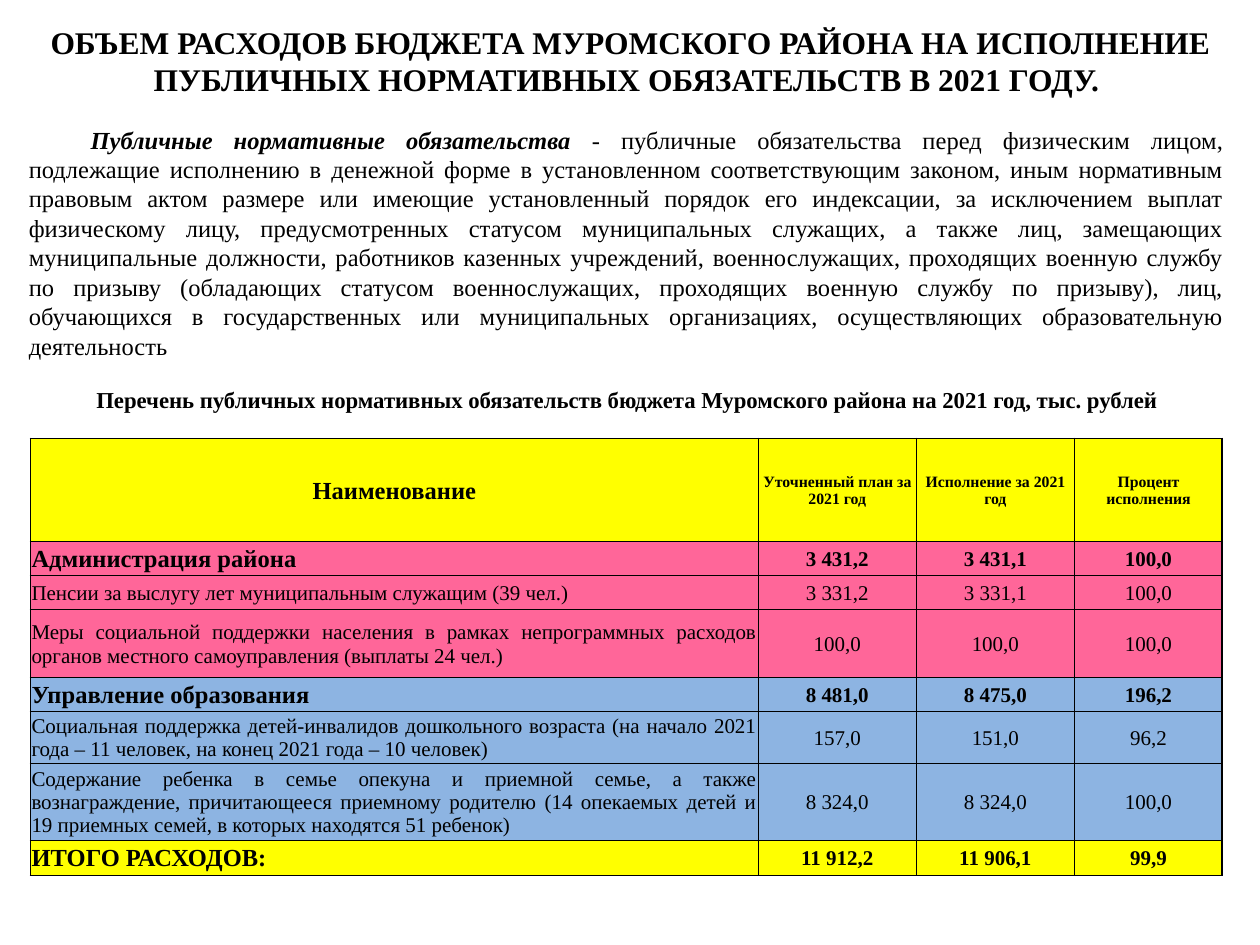
from lxml import etree
from pptx import Presentation
from pptx.dml.color import RGBColor
from pptx.enum.text import MSO_ANCHOR, PP_ALIGN
from pptx.oxml.ns import qn
from pptx.util import Inches, Pt

CENTER, JUSTIFY = PP_ALIGN.CENTER, PP_ALIGN.JUSTIFY
TOP, MIDDLE = MSO_ANCHOR.TOP, MSO_ANCHOR.MIDDLE
FONT = "Times New Roman"
BLACK, YELLOW, PINK, BLUE = "000000", "FFFF00", "FF6699", "8DB4E2"

TITLE = ("ОБЪЕМ РАСХОДОВ БЮДЖЕТА МУРОМСКОГО РАЙОНА НА ИСПОЛНЕНИЕ "
         "ПУБЛИЧНЫХ НОРМАТИВНЫХ ОБЯЗАТЕЛЬСТВ В 2021 ГОДУ. ")
TERM = "Публичные нормативные обязательства"
DEFINITION = (
    " - публичные обязательства перед физическим лицом, подлежащие исполнению "
    "в денежной форме в установленном соответствующим законом, иным нормативным "
    "правовым актом размере или имеющие установленный порядок его индексации, "
    "за исключением выплат физическому лицу, предусмотренных статусом "
    "муниципальных служащих, а также лиц, замещающих муниципальные должности, "
    "работников казенных учреждений, военнослужащих, проходящих военную службу "
    "по призыву (обладающих статусом военнослужащих, проходящих военную службу "
    "по призыву), лиц, обучающихся в государственных или муниципальных "
    "организациях, осуществляющих образовательную деятельность")
CAPTION = ("Перечень публичных нормативных обязательств бюджета "
           "Муромского района на 2021 год, тыс. рублей")
HEADERS = ["Наименование", "Уточненный план за 2021 год",
           "Исполнение за 2021 год", "Процент исполнения"]
ROWS = [
    (0.27, PINK, True, ["Администрация района", "3 431,2", "3 431,1", "100,0"]),
    (0.27, PINK, False, ["Пенсии за выслугу лет муниципальным служащим (39 чел.)",
                         "3 331,2", "3 331,1", "100,0"]),
    (0.54, PINK, False, ["Меры социальной поддержки населения в рамках непрограммных "
                         "расходов органов местного самоуправления (выплаты 24 чел.)",
                         "100,0", "100,0", "100,0"]),
    (0.27, BLUE, True, ["Управление образования ", "8 481,0", "8 475,0", "196,2"]),
    (0.27, BLUE, False, ["Социальная поддержка детей-инвалидов дошкольного возраста "
                         "(на начало 2021 года – 11 человек, на конец 2021 года – "
                         "10 человек)", "157,0", "151,0", "96,2"]),
    (0.55, BLUE, False, ["Содержание ребенка в семье опекуна и приемной семье, а также "
                         "вознаграждение, причитающееся приемному родителю (14 опекаемых "
                         "детей и 19 приемных семей, в которых находятся 51 ребенок)",
                         "8 324,0", "8 324,0", "100,0"]),
    (0.28, YELLOW, True, ["ИТОГО РАСХОДОВ:", "11 912,2", "11 906,1", "99,9"]),
]
COLUMN_WIDTHS = [5.78, 1.25, 1.26, 1.17]
CAPTION_HEIGHT, HEADER_HEIGHT = 0.6, 0.82
THICK_COLUMN_EDGES = {0, 1, len(COLUMN_WIDTHS)}
THICK_ROW_EDGES = {1, 2, len(ROWS) + 1, len(ROWS) + 2}


def color(value):
    return RGBColor.from_string(value)


def add_span(para, text, size, bold=False, italic=False):
    span = para.add_run()
    span.text = text
    span.font.name = FONT
    span.font.size = Pt(size)
    span.font.bold = bold
    span.font.italic = italic
    span.font.color.rgb = color(BLACK)


def place(box, left, top, width, height):
    box.left, box.top = Inches(left), Inches(top)
    box.width, box.height = Inches(width), Inches(height)
    box.text_frame.word_wrap = True
    box.text_frame.vertical_anchor = TOP


def add_border(cell, side, width):
    line = etree.SubElement(cell._tc.get_or_add_tcPr(), qn(f"a:ln{side}"),
                            w=str(Pt(width)))
    fill = etree.SubElement(line, qn("a:solidFill"))
    etree.SubElement(fill, qn("a:srgbClr"), val=BLACK)


def edge_width(edge, thick_edges):
    return 1 if edge in thick_edges else 0.5


def fill_cell(cell, text, size, bold, align):
    cell.margin_left = cell.margin_right = cell.margin_top = Inches(0.01)
    cell.margin_bottom = 0
    cell.vertical_anchor = MIDDLE
    para = cell.text_frame.paragraphs[0]
    para.alignment = align
    add_span(para, text, size, bold)


def add_title(slide):
    title = slide.shapes.title
    place(title, 0.28, 0.13, 9.45, 0.71)
    para = title.text_frame.paragraphs[0]
    para.alignment = CENTER
    add_span(para, TITLE, 18, bold=True)


def add_definition(slide):
    box = slide.shapes.add_textbox(0, 0, 0, 0)
    place(box, 0.13, 0.94, 9.68, 2.34)
    para = box.text_frame.paragraphs[0]
    para.alignment = JUSTIFY
    para._p.get_or_add_pPr().set("indent", str(Inches(0.49)))
    add_span(para, TERM, 14, bold=True, italic=True)
    add_span(para, DEFINITION, 14)


def add_spending_table(slide):
    heights = [CAPTION_HEIGHT, HEADER_HEIGHT] + [row[0] for row in ROWS]
    table = slide.shapes.add_table(
        len(heights), len(COLUMN_WIDTHS), Inches(0.24), Inches(2.88),
        Inches(sum(COLUMN_WIDTHS)), Inches(sum(heights))).table
    table.first_row = table.horz_banding = False
    for column, width in zip(table.columns, COLUMN_WIDTHS):
        column.width = Inches(width)
    for row, height in zip(table.rows, heights):
        row.height = Inches(height)

    for cell in table.rows[0].cells:
        add_border(cell, "B", 1)
        cell.fill.background()
    table.cell(0, 0).merge(table.cell(0, len(COLUMN_WIDTHS) - 1))
    fill_cell(table.cell(0, 0), CAPTION, 13, True, CENTER)

    body = [(HEADER_HEIGHT, YELLOW, True, HEADERS)] + ROWS
    for r, (_, shade, bold, texts) in enumerate(body, start=1):
        header = r == 1
        for c, text in enumerate(texts):
            cell = table.cell(r, c)
            add_border(cell, "L", edge_width(c, THICK_COLUMN_EDGES))
            add_border(cell, "R", edge_width(c + 1, THICK_COLUMN_EDGES))
            add_border(cell, "T", edge_width(r, THICK_ROW_EDGES))
            add_border(cell, "B", edge_width(r + 1, THICK_ROW_EDGES))
            cell.fill.solid()
            cell.fill.fore_color.rgb = color(shade)
            if c == 0:
                size = 14 if bold else 12
            else:
                size = 9 if header else 12
            align = CENTER if header or c > 0 else JUSTIFY
            fill_cell(cell, text, size, bold, align)


def main():
    deck = Presentation()
    deck.slide_width, deck.slide_height = Inches(10), Inches(7.5)
    slide = deck.slides.add_slide(deck.slide_layouts[5])
    add_title(slide)
    add_definition(slide)
    add_spending_table(slide)
    deck.save("out.pptx")


if __name__ == "__main__":
    main()
